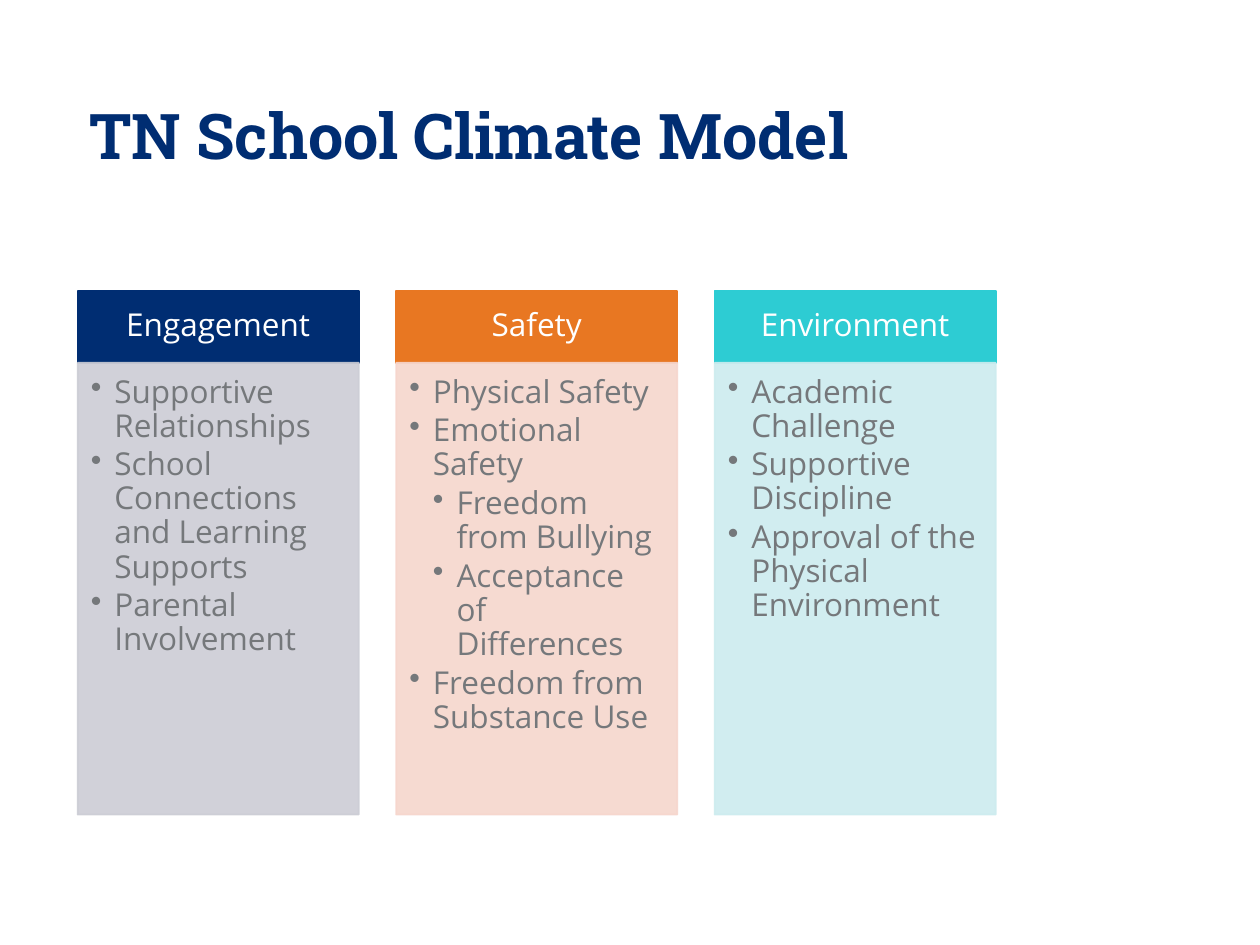
from lxml import etree
from pptx import Presentation
from pptx.dml.color import RGBColor
from pptx.enum.shapes import MSO_SHAPE
from pptx.enum.text import MSO_ANCHOR as ANCHOR, MSO_AUTO_SIZE as AUTO, PP_ALIGN as ALIGN
from pptx.oxml.ns import qn
from pptx.util import Pt

LEFT, TOP, WIDTH, PITCH = 44.4, 166.1, 160.6, 182
HEAD_H, BODY_H = 41.2, 258.2
INDENT = 13.5
COLUMNS = [
    ("Engagement", "002D72", "CCCDD5", [
        (1, "Supportive Relationships"),
        (1, "School Connections and Learning Supports"),
        (1, "Parental Involvement")]),
    ("Safety", "E87722", "F6D6CD", [
        (1, "Physical Safety"),
        (1, "Emotional Safety"),
        (2, "Freedom from Bullying"),
        (2, "Acceptance of Differences"),
        (1, "Freedom from Substance Use")]),
    ("Environment", "2DCCD3", "CDECEF", [
        (1, "Academic Challenge"),
        (1, "Supportive Discipline"),
        (1, "Approval of the Physical Environment")]),
]


def add_box(x, y, h, color, anchor, margins, opacity=100):
    """Add a filled rectangle with its text frame set up."""
    sp = s.shapes.add_shape(MSO_SHAPE.RECTANGLE, Pt(x), Pt(y), Pt(WIDTH), Pt(h))
    sp.shadow.inherit = False
    sp.line.width = Pt(1)
    for fill in (sp.fill, sp.line.fill):
        fill.solid()
        fill.fore_color.rgb = RGBColor.from_string(color)
    if opacity < 100:
        for clr in sp._element.spPr.iter(qn("a:srgbClr")):
            etree.SubElement(clr, qn("a:alpha"), val=str(opacity * 1000))
    tf = sp.text_frame
    tf.word_wrap = True
    tf.vertical_anchor = anchor
    for side, value in zip(("left", "top", "right", "bottom"), margins):
        setattr(tf, f"margin_{side}", Pt(value))
    return tf


def format_text(p, text, name, size, color, bold=False, **spacing):
    p.add_run().text = text
    for key, value in {"line_spacing": 0.9, **spacing}.items():
        setattr(p, key, value)
    font = p.runs[0].font
    for key, value in {"name": name, "size": Pt(size), "bold": bold}.items():
        setattr(font, key, value)
    font.color.rgb = RGBColor.from_string(color)


prs = Presentation()
prs.slide_width, prs.slide_height = Pt(720), Pt(540)
s = prs.slides.add_slide(prs.slide_layouts[5])

title = s.shapes.title
title.left, title.top, title.width, title.height = Pt(44), Pt(31), Pt(577), Pt(97)
tf = title.text_frame
tf.auto_size = AUTO.NONE
tf.vertical_anchor = ANCHOR.MIDDLE
format_text(tf.paragraphs[0], "TN School Climate Model", "Roboto Slab", 36, "002D72",
            bold=True, alignment=ALIGN.LEFT)

for i, (heading, head_color, body_color, items) in enumerate(COLUMNS):
    x = LEFT + i * PITCH
    tf = add_box(x, TOP, HEAD_H, head_color, ANCHOR.MIDDLE, (10, 5.8, 10, 5.8))
    format_text(tf.paragraphs[0], heading, "Open Sans", 18, "FFFFFF", alignment=ALIGN.CENTER)

    tf = add_box(x, TOP + HEAD_H, BODY_H, body_color, ANCHOR.TOP, (7.5, 7.5, 10, 11.5), opacity=90)
    for j, (level, text) in enumerate(items):
        p = tf.add_paragraph() if j else tf.paragraphs[0]
        pPr = p._p.get_or_add_pPr()
        pPr.set("marL", str(Pt(level * INDENT)))
        pPr.set("indent", str(-Pt(INDENT)))
        etree.SubElement(pPr, qn("a:buChar"), char="•")
        format_text(p, text, "Open Sans", 18, "75787B",
                    alignment=ALIGN.LEFT, level=level, space_after=Pt(2.7))

prs.save("out.pptx")
